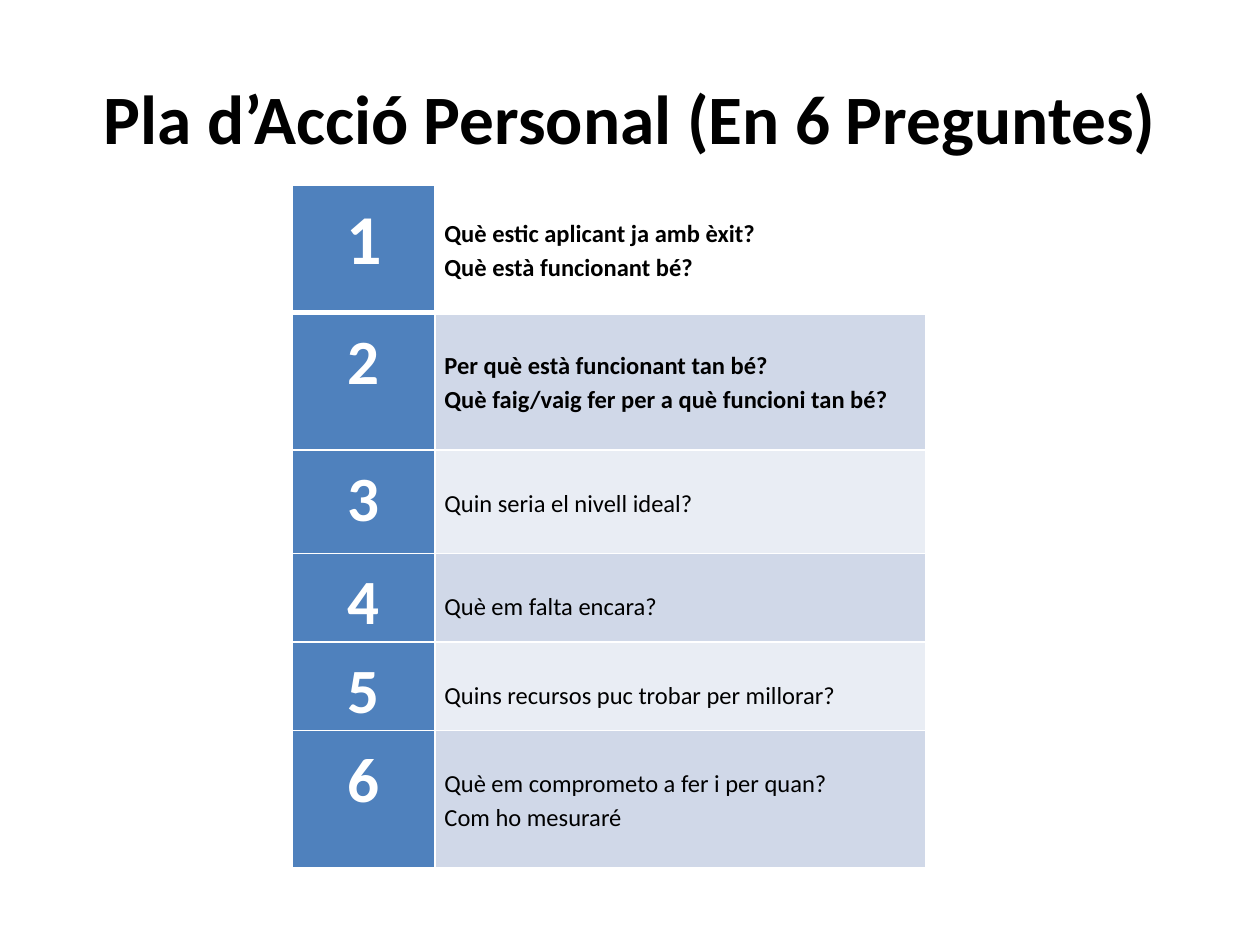
from dataclasses import dataclass

from lxml import etree
from pptx import Presentation
from pptx import util as u
from pptx.dml.color import RGBColor
from pptx.enum import text
from pptx.oxml.ns import qn

Pt = u.Pt


@dataclass(frozen=True)
class Theme:
    font: str = "Calibri"
    dark: str = "000000"
    light: str = "FFFFFF"
    accent: str = "4F81BD"
    band: str = "D0D8E8"
    pale_band: str = "E9EDF4"
    title_size: float = 39.6
    first_number_size: float = 40
    number_size: float = 36
    question_size: float = 14
    line_spacing: float = 1.15
    border: float = 1
    header_border: float = 3


THEME = Theme()
QUESTIONS = [
    (["Què estic aplicant ja amb èxit?", "Què està funcionant bé?"], True, 72.8),
    (["Per què està funcionant tan bé?",
      "Què faig/vaig fer per a què funcioni tan bé?"], True, 78.6),
    (["Quin seria el nivell ideal?"], False, 59),
    (["Què em falta encara?"], False, 50.5),
    (["Quins recursos puc trobar per millorar?"], False, 50.5),
    (["Què em comprometo a fer i per quan?", "Com ho mesuraré"], False, 78.6),
]


def write_text(frame, lines, size, color=THEME.dark, bold=False,
               align=text.PP_ALIGN.LEFT, spacing=1.0):
    for index, line in enumerate(lines):
        paragraph = frame.paragraphs[0] if index == 0 else frame.add_paragraph()
        paragraph.alignment = align
        paragraph.line_spacing = spacing
        run = paragraph.add_run()
        run.text = line
        run.font.name = THEME.font
        run.font.size = Pt(size)
        run.font.bold = bold
        run.font.color.rgb = RGBColor.from_string(color)


def set_borders(cell, bottom, top):
    properties = cell._tc.get_or_add_tcPr()
    widths = {"a:lnL": THEME.border, "a:lnR": THEME.border,
              "a:lnT": top, "a:lnB": bottom}
    for position, (tag, width) in enumerate(widths.items()):
        line = etree.Element(qn(tag), w=str(Pt(width)))
        fill = etree.SubElement(line, qn("a:solidFill"))
        etree.SubElement(fill, qn("a:srgbClr"), val=THEME.light)
        properties.insert(position, line)


def format_cell(cell, fill, row, margin_top=0):
    cell.margin_left = cell.margin_right = Pt(5.4)
    cell.margin_top, cell.margin_bottom = Pt(margin_top), Pt(0)
    cell.vertical_anchor = text.MSO_ANCHOR.TOP
    if fill:
        cell.fill.solid()
        cell.fill.fore_color.rgb = RGBColor.from_string(fill)
    else:
        cell.fill.background()
    set_borders(cell,
                bottom=THEME.header_border if row == 0 else THEME.border,
                top=THEME.header_border if row == 1 else THEME.border)


def place_title(slide, left, top, width, height):
    title = slide.shapes.title
    title.left, title.top = Pt(left), Pt(top)
    title.width, title.height = Pt(width), Pt(height)
    title.text_frame.vertical_anchor = text.MSO_ANCHOR.MIDDLE
    write_text(title.text_frame, ["Pla d’Acció Personal (En 6 Preguntes)"],
               THEME.title_size, bold=True, align=text.PP_ALIGN.CENTER)


def place_questions(slide, left, top, width, number_width):
    height = sum(row_height for _, _, row_height in QUESTIONS)
    table = slide.shapes.add_table(len(QUESTIONS), 2, Pt(left), Pt(top),
                                   Pt(width), Pt(height)).table
    table.columns[0].width = Pt(number_width)
    table.columns[1].width = Pt(width - number_width)
    for row, (lines, bold, row_height) in enumerate(QUESTIONS):
        table.rows[row].height = Pt(row_height)
        number, question = table.cell(row, 0), table.cell(row, 1)
        band = THEME.band if row % 2 else THEME.pale_band
        format_cell(number, THEME.accent, row)
        format_cell(question, band if row else None, row,
                    margin_top=19.6 if row else 16.8)
        write_text(number.text_frame, [str(row + 1)],
                   THEME.number_size if row else THEME.first_number_size,
                   color=THEME.light, bold=True,
                   align=text.PP_ALIGN.CENTER, spacing=THEME.line_spacing)
        write_text(question.text_frame, lines, THEME.question_size,
                   bold=bold, spacing=THEME.line_spacing)


def main():
    presentation = Presentation()
    presentation.slide_width, presentation.slide_height = Pt(720), Pt(540)
    slide = presentation.slides.add_slide(presentation.slide_layouts[5])
    place_title(slide, left=36, top=21.6, width=648, height=90)
    place_questions(slide, left=167.2, top=105.8, width=361.6, number_width=81.4)
    presentation.save("out.pptx")


if __name__ == "__main__":
    main()
